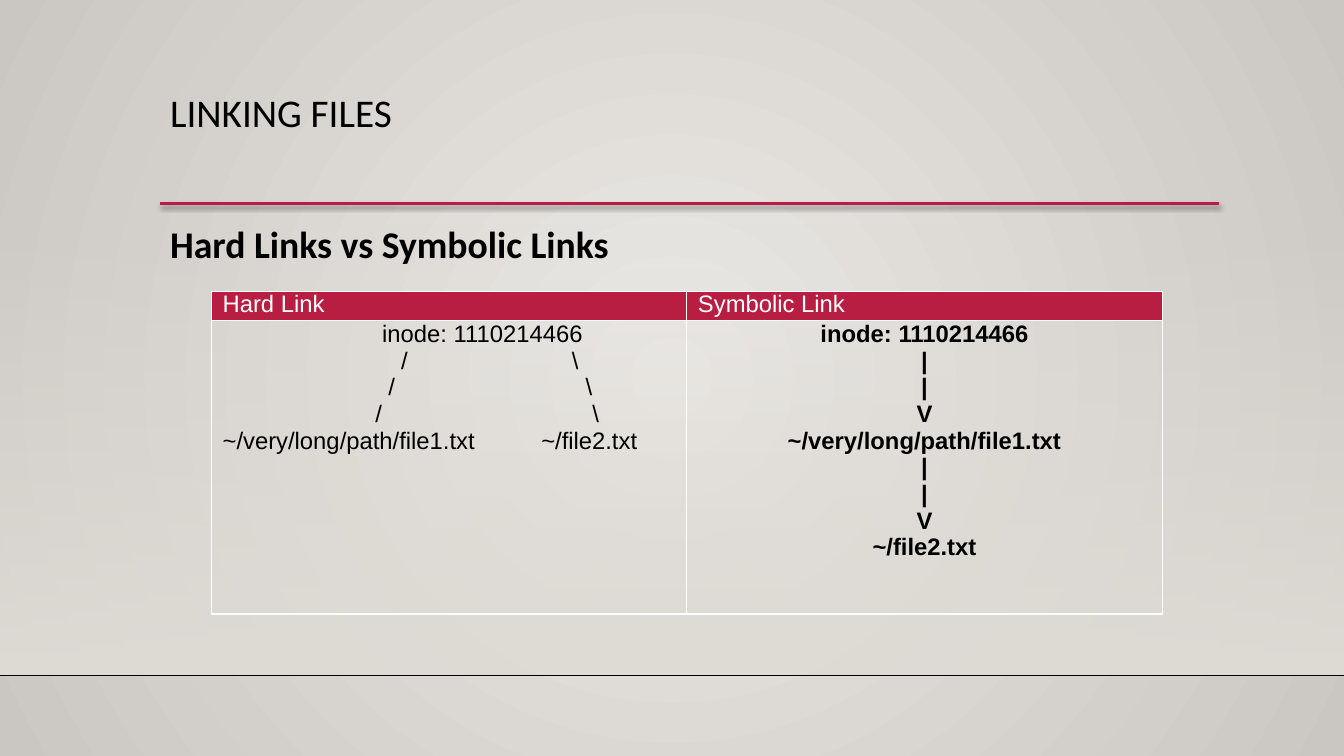
from lxml.etree import SubElement
from pptx import Presentation
from pptx.dml.color import RGBColor
from pptx.enum.shapes import MSO_CONNECTOR, MSO_SHAPE
from pptx.enum.text import PP_ALIGN
from pptx.oxml import parse_xml
from pptx.oxml.ns import nsdecls, qn
from pptx.util import Cm, Pt

COLOURS = {
    "centre": "ECEAE7", "edge": "CAC6C1", "floor": "DFDBD5",
    "accent": "B71E42", "ink": "000000", "white": "FFFFFF",
}
SLIDE_WIDTH, SLIDE_HEIGHT = 33.87, 19.05
LEFT = 4.04
FLOOR_TOP, FLOOR_LINE = 5.61, 17.02

HEADERS = ["Hard Link", "Symbolic Link"]
# Each line lists (tab position in cm, text); position 0 is the cell's margin.
HARD_LINK_LINES = [
    [(4.02, "inode: 1110214466")],
    [(4.5, "/"), (8.8, "\\")],
    [(4.18, "/"), (9.15, "\\")],
    [(3.85, "/"), (9.32, "\\")],
    [(0, "~/very/long/path/file1.txt"), (8.03, "~/file2.txt")],
]
ARROW_DOWN = ["|", "|", "V"]
SYMBOLIC_LINK_LINES = [
    "inode: 1110214466", *ARROW_DOWN,
    "~/very/long/path/file1.txt", *ARROW_DOWN,
    "~/file2.txt",
]


def rgb(name):
    return RGBColor.from_string(COLOURS[name])


def add_span(para, text, size, font, colour="ink", bold=False):
    span = para.add_run()
    span.text = text
    span.font.size = Pt(size)
    span.font.name = font
    span.font.bold = bold
    span.font.color.rgb = rgb(colour)


def set_gradient(fill, owner, start, end):
    """Give the fill two stops and return its gradient element."""
    fill.gradient()
    for stop, position, name in zip(fill.gradient_stops, (0, 1), (start, end)):
        stop.position = position
        stop.color.rgb = rgb(name)
    return owner.find(".//" + qn("a:gradFill"))


def paint_background(page):
    gradient = set_gradient(page.background.fill, page.element, "centre", "edge")
    gradient.remove(gradient.find(qn("a:lin")))
    circle = SubElement(gradient, qn("a:path"), path="circle")
    SubElement(circle, qn("a:fillToRect"), {side: "50000" for side in "ltrb"})


def add_floor(page):
    floor = page.shapes.add_shape(
        MSO_SHAPE.RECTANGLE, Cm(0), Cm(FLOOR_TOP),
        Cm(SLIDE_WIDTH), Cm(FLOOR_LINE - FLOOR_TOP))
    floor.shadow.inherit = False
    floor.line.fill.background()
    gradient = set_gradient(floor.fill, floor.element, "floor", "floor")
    gradient.find(qn("a:lin")).set("ang", "5400000")
    SubElement(gradient.find(".//" + qn("a:srgbClr")), qn("a:alpha"), val="0")


def add_rule(page, left, right, top, colour, width, shadow=False):
    rule = page.shapes.add_connector(
        MSO_CONNECTOR.STRAIGHT, Cm(left), Cm(top), Cm(right), Cm(top))
    rule.line.color.rgb = rgb(colour)
    rule.line.width = Pt(width)
    effects = SubElement(rule.element.spPr, qn("a:effectLst"))
    if shadow:
        outer = SubElement(
            effects, qn("a:outerShdw"), blurRad=str(Pt(3.1)),
            dist=str(Pt(1.8)), dir="5400000", rotWithShape="0")
        shade = SubElement(outer, qn("a:srgbClr"), val=COLOURS["ink"])
        SubElement(shade, qn("a:alpha"), val="35000")


def add_text(page, text, top, width, height, size, spacing, bold=False):
    box = page.shapes.add_textbox(Cm(LEFT), Cm(top), Cm(width), Cm(height))
    box.text_frame.word_wrap = True
    para = box.text_frame.paragraphs[0]
    para.line_spacing = spacing
    add_span(para, text, size, "Calibri", bold=bold)


def style_cell(cell, fill=None):
    cell.margin_left = cell.margin_right = Cm(0.28)
    cell.margin_top = cell.margin_bottom = Cm(0)
    if fill:
        cell.fill.solid()
        cell.fill.fore_color.rgb = rgb(fill)
    else:
        cell.fill.background()
    properties = cell._tc.get_or_add_tcPr()
    for index, side in enumerate("LRTB"):
        properties.insert(index, parse_xml(
            f'<a:ln{side} {nsdecls("a")} w="{Pt(1)}"><a:solidFill>'
            f'<a:srgbClr val="{COLOURS["white"]}"/></a:solidFill></a:ln{side}>'))


def cell_paragraphs(cell, lines):
    """Yield each line with a paragraph of the cell to hold it."""
    frame = cell.text_frame
    for index, line in enumerate(lines):
        yield line, frame.add_paragraph() if index else frame.paragraphs[0]


def fill_tabbed(cell, lines):
    for line, para in cell_paragraphs(cell, lines):
        tabs = SubElement(para._p.get_or_add_pPr(), qn("a:tabLst"))
        for position, text in line:
            if position:
                SubElement(tabs, qn("a:tab"), pos=str(Cm(position)), algn="l")
            add_span(para, "\t" + text if position else text, 17, "Arial")


def fill_centred(cell, lines):
    for line, para in cell_paragraphs(cell, lines):
        para.alignment = PP_ALIGN.CENTER
        add_span(para, line, 17, "Arial", bold=True)


def add_link_table(page):
    table = page.shapes.add_table(
        2, 2, Cm(5.33), Cm(7.34), Cm(23.96), Cm(8.13)).table
    table.first_row = table.horz_banding = False
    table.rows[0].height, table.rows[1].height = Cm(0.74), Cm(7.39)
    for column, header in enumerate(HEADERS):
        title, body = table.cell(0, column), table.cell(1, column)
        style_cell(title, "accent")
        style_cell(body)
        add_span(title.text_frame.paragraphs[0], header, 17, "Arial", "white")
    fill_tabbed(table.cell(1, 0), HARD_LINK_LINES)
    fill_centred(table.cell(1, 1), SYMBOLIC_LINK_LINES)


def main():
    deck = Presentation()
    deck.slide_width, deck.slide_height = Cm(SLIDE_WIDTH), Cm(SLIDE_HEIGHT)
    page = deck.slides.add_slide(deck.slide_layouts[6])
    paint_background(page)
    add_floor(page)
    add_rule(page, 0, SLIDE_WIDTH, FLOOR_LINE, "ink", 1)
    add_rule(page, LEFT, 30.73, 5.13, "accent", 2.5, shadow=True)
    add_text(page, "LINKING FILES", 2.24, 26.67, 2.92, 28, 0.9)
    add_text(page, "Hard Links vs Symbolic Links", 5.21, 19.38, 2.06,
             26.9, 1.2, bold=True)
    add_link_table(page)
    deck.save("out.pptx")


if __name__ == "__main__":
    main()
